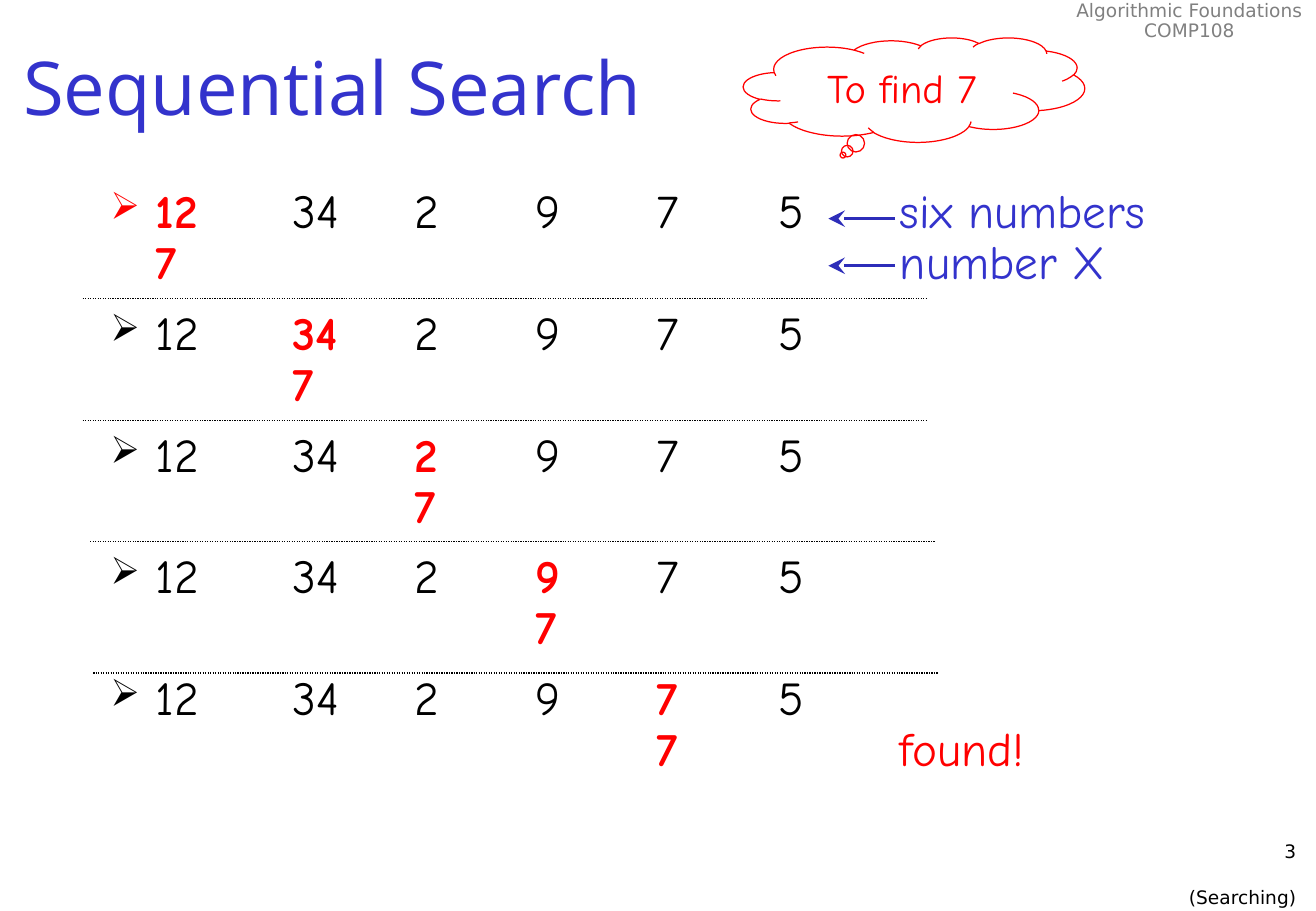
import pptx
import pptx.util
import pptx.dml.color
import pptx.enum.dml
import pptx.enum.shapes
import pptx.enum.text
import pptx.oxml
import pptx.oxml.ns

Pt = pptx.util.Pt
ALIGN = pptx.enum.text.PP_ALIGN
ANCHOR = pptx.enum.text.MSO_ANCHOR

COLORS = {"title": "3333CC", "hit": "FF0000", "plain": "000000",
          "arrow": "2D2DB9", "course": "808080"}
COURSE = ["Algorithmic Foundations", "COMP108"]
TITLE = "Sequential Search"
GOAL = "To find 7"
FOOTER = ["3", "(Searching)"]
NUMBERS = ["12", "34", "2", "9", "7", "5"]
WANTED = "7"
STEPS = [
    {"at": 0, "notes": ("six numbers", "number X"), "note_color": "title"},
    {"at": 1},
    {"at": 2},
    {"at": 3},
    {"at": 4, "notes": ("", "found!"), "note_color": "hit"},
]
DIVIDERS = [(49, 177.1), (49, 249.1), (53.5, 321.1), (55.3, 398.9)]
DIVIDER_WIDTH = 500.7
ARROW_HEIGHTS = [129.6, 157.5]
ARROW_ENDS = (530.6, 491)
TAB_STOPS = [108 + 72 * i for i in range(6)]


def rgb(name):
    return pptx.dml.color.RGBColor.from_string(COLORS[name])


def write(frame, paragraphs, font, size, color="plain", align=ALIGN.LEFT,
          anchor=ANCHOR.TOP, wrap=True, spacing=None, before=0, after=0, first_before=0):
    frame.word_wrap = wrap
    frame.vertical_anchor = anchor
    frame.auto_size = pptx.enum.text.MSO_AUTO_SIZE.NONE
    for i, content in enumerate(paragraphs):
        paragraph = frame.add_paragraph() if i else frame.paragraphs[0]
        paragraph.alignment = align
        paragraph.line_spacing = spacing
        paragraph.space_before = Pt(before if i else first_before)
        paragraph.space_after = Pt(after)
        pieces = [(content, color, False)] if isinstance(content, str) else content
        for words, shade, bold in pieces:
            if words == "\n":
                paragraph.add_line_break()
                continue
            run = paragraph.add_run()
            run.text = words
            run.font.name, run.font.size, run.font.bold = font, Pt(size), bold
            run.font.color.rgb = rgb(shade)


def text_box(slide, left, top, width, height):
    return slide.shapes.add_textbox(Pt(left), Pt(top), Pt(width), Pt(height)).text_frame


def step_runs(step):
    k = step["at"]
    list_note, wanted_note = step.get("notes", ("", ""))
    shade = step.get("note_color", "plain")
    runs = [
        ("".join(n + "\t" for n in NUMBERS[:k]), "plain", False),
        (NUMBERS[k], "hit", True),
        ("".join("\t" + n for n in NUMBERS[k + 1:]), "plain", False),
        ("\t" + list_note if list_note else "", shade, False),
        ("\n", "plain", False),
        ("\t" * k, "plain", False),
        (WANTED, "hit", True),
        ("\t" * (len(NUMBERS) - k) + wanted_note if wanted_note else "", shade, False),
    ]
    return [run for run in runs if run[0]]


def add_bullet_and_tabs(paragraph):
    properties = paragraph._p.get_or_add_pPr()
    properties.set("marL", str(Pt(27)))
    properties.set("indent", str(Pt(-27)))
    stops = "".join(f'<a:tab pos="{Pt(stop)}" algn="l"/>' for stop in TAB_STOPS)
    for xml in ('<a:buSzPct {} val="80000"/>', '<a:buChar {} char="➢"/>',
                "<a:tabLst {}>" + stops + "</a:tabLst>"):
        properties.append(pptx.oxml.parse_xml(xml.format(pptx.oxml.ns.nsdecls("a"))))


def add_line(slide, start, end, y, color, width):
    line = slide.shapes.add_connector(
        pptx.enum.shapes.MSO_CONNECTOR.STRAIGHT, Pt(start), Pt(y), Pt(end), Pt(y))
    line.line.color.rgb = rgb(color)
    line.line.width = Pt(width)
    line._element.spPr.append(
        pptx.oxml.parse_xml(f'<a:effectLst {pptx.oxml.ns.nsdecls("a")}/>'))
    return line


def main():
    deck = pptx.Presentation()
    deck.slide_width, deck.slide_height = Pt(780), Pt(540)
    slide = deck.slides.add_slide(deck.slide_layouts[5])

    write(text_box(slide, 630, -2.9, 150, 31), COURSE, "DejaVu Sans", 11,
          color="course", align=ALIGN.CENTER, wrap=False, spacing=0.9)

    title = slide.shapes.title
    title.left, title.top, title.width, title.height = Pt(6.5), Pt(5.8), Pt(773.5), Pt(90)
    write(title.text_frame, [TITLE], "Open Sans", 44, color="title", anchor=ANCHOR.MIDDLE)

    trace = text_box(slide, 58.3, 108, 702, 391.7)
    write(trace, [step_runs(step) for step in STEPS], "Comic Neue", 28,
          spacing=0.9, before=5.8, after=5.8, first_before=5.8)
    for paragraph in trace.paragraphs:
        add_bullet_and_tabs(paragraph)

    for left, y in DIVIDERS:
        divider = add_line(slide, left, left + DIVIDER_WIDTH, y, "plain", 0.75)
        divider.line.dash_style = pptx.enum.dml.MSO_LINE.ROUND_DOT

    cloud = slide.shapes.add_shape(pptx.enum.shapes.MSO_SHAPE.CLOUD_CALLOUT,
                                   Pt(440.6), Pt(22.3), Pt(202.3), Pt(61.9))
    cloud.adjustments[0], cloud.adjustments[1] = -0.208, 0.625
    cloud.shadow.inherit = False
    cloud.fill.background()
    cloud.line.color.rgb = rgb("hit")
    cloud.line.width = Pt(0.75)
    write(cloud.text_frame, [GOAL], "Comic Neue", 24, color="hit",
          align=ALIGN.CENTER, anchor=ANCHOR.MIDDLE, wrap=False)

    for y in ARROW_HEIGHTS:
        arrow = add_line(slide, *ARROW_ENDS, y, "arrow", 1.5)
        arrow.line._get_or_add_ln().append(pptx.oxml.parse_xml(
            f'<a:tailEnd {pptx.oxml.ns.nsdecls("a")} type="stealth" w="lg" len="lg"/>'))

    write(text_box(slide, 612.7, 494.6, 162.7, 36), FOOTER, "DejaVu Sans", 11,
          align=ALIGN.RIGHT, before=13.8)

    deck.save("out.pptx")


if __name__ == "__main__":
    main()
